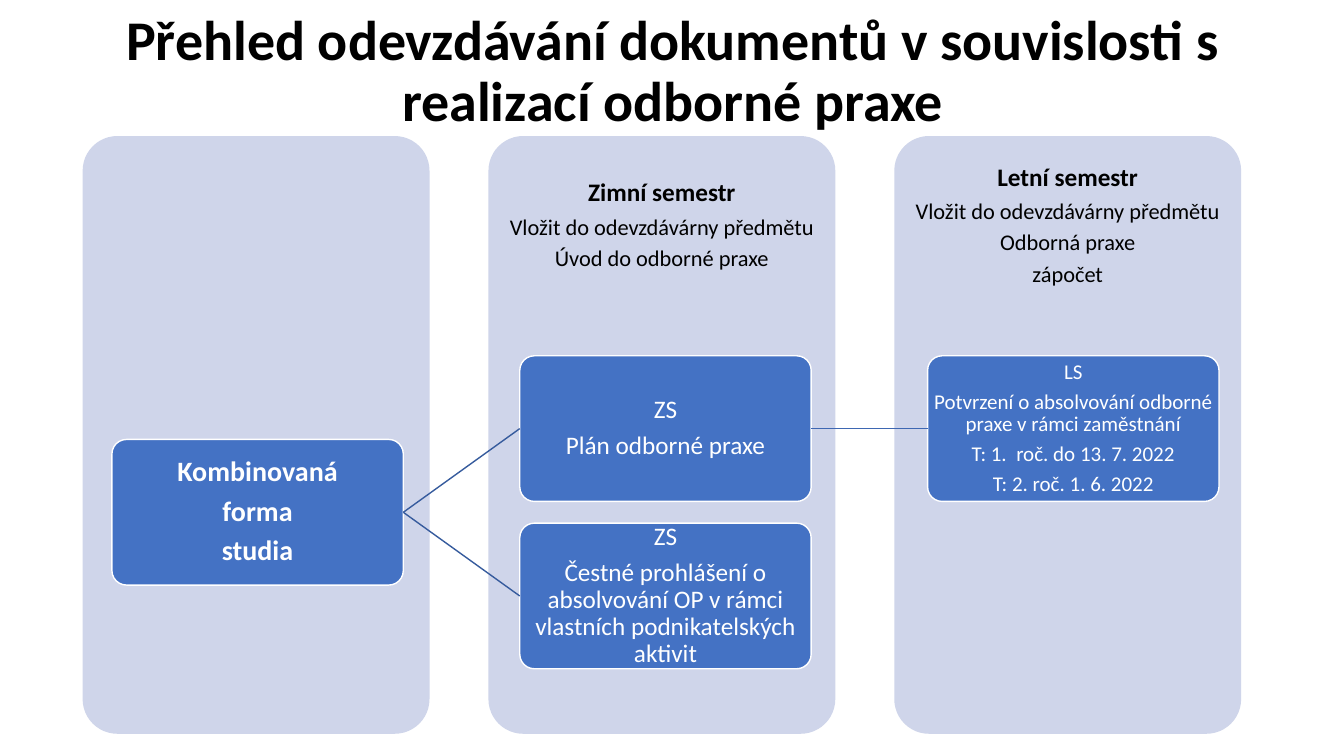
import pptx
import pptx.util
import pptx.dml.color
import pptx.enum.shapes
import pptx.enum.text
import pptx.oxml.ns
import lxml.etree
from dataclasses import dataclass

PX = 914400 // 200  # 200 px to the inch


@dataclass(frozen=True)
class Theme:
    font: str = "Calibri"
    ink: str = "000000"
    white: str = "FFFFFF"
    panel: str = "CFD5EA"
    box: str = "4472C4"
    branch_line: str = "365B9D"
    next_line: str = "3E67B2"
    title_size: int = 40
    form_size: int = 20
    heading_size: int = 18
    detail_size: int = 16
    small_size: int = 15
    line_spacing: float = 0.9
    gap_ratio: float = 0.33
    corner: float = 0.1


THEME = Theme()

# Layout in px
PANEL_LEFT, PANEL_TOP, PANEL_PITCH = 164, 270, 805
PANEL_WIDTH, PANEL_HEIGHT, HEADING_HEIGHT = 688, 1186, 356
BOX_LEFT, BOX_PITCH, BOX_WIDTH, BOX_HEIGHT = 222, 809, 578, 289
ROW_TOP, HALF_ROW = 706, 166
LEFT_SITE, RIGHT_SITE = 1, 3

# Heading lines of each column
HEADINGS = [
    [],
    ["Zimní semestr", "Vložit do odevzdávárny předmětu", "Úvod do odborné praxe"],
    ["Letní semestr", "Vložit do odevzdávárny předmětu", "Odborná praxe", "zápočet"],
]


def px(*lengths):
    return [pptx.util.Emu(length * PX) for length in lengths]


def rgb(value):
    return pptx.dml.color.RGBColor.from_string(value)


def write_lines(shape, lines, color, inset, spaced=True):
    """Fill a shape with centred (text, size, bold) paragraphs."""
    frame = shape.text_frame
    frame.word_wrap = True
    frame.vertical_anchor = pptx.enum.text.MSO_ANCHOR.MIDDLE
    (frame.margin_left, frame.margin_right,
     frame.margin_top, frame.margin_bottom) = px(*[inset] * 4)
    for index, (text, size, bold) in enumerate(lines):
        paragraph = frame.paragraphs[0] if index == 0 else frame.add_paragraph()
        paragraph.text = text
        paragraph.alignment = pptx.enum.text.PP_ALIGN.CENTER
        paragraph.line_spacing = THEME.line_spacing
        if spaced:
            paragraph.space_after = pptx.util.Pt(size * THEME.gap_ratio)
        paragraph.font.name = THEME.font
        paragraph.font.size = pptx.util.Pt(size)
        paragraph.font.bold = bold
        paragraph.font.color.rgb = rgb(color)


def add_rounded(slide, left, top, width, height, fill, outline=None):
    rounded = slide.shapes.add_shape(
        pptx.enum.shapes.MSO_SHAPE.ROUNDED_RECTANGLE, *px(left, top, width, height))
    rounded.adjustments[0] = THEME.corner
    rounded.shadow.inherit = False
    rounded.fill.solid()
    rounded.fill.fore_color.rgb = rgb(fill)
    if outline:
        rounded.line.color.rgb = rgb(outline)
        rounded.line.width = pptx.util.Pt(1)
    else:
        rounded.line.fill.background()
    return rounded


def add_column(slide, column, heading):
    left = PANEL_LEFT + column * PANEL_PITCH
    add_rounded(slide, left, PANEL_TOP, PANEL_WIDTH, PANEL_HEIGHT, THEME.panel)
    if heading:
        semester = slide.shapes.add_textbox(
            *px(left, PANEL_TOP, PANEL_WIDTH, HEADING_HEIGHT))
        lines = [(heading[0], THEME.heading_size, True)]
        lines += [(text, THEME.detail_size, False) for text in heading[1:]]
        write_lines(semester, lines, THEME.ink, inset=28)


def add_box(slide, column, half_row, texts, size, bold=False):
    box = add_rounded(slide, BOX_LEFT + column * BOX_PITCH, ROW_TOP + half_row * HALF_ROW,
                      BOX_WIDTH, BOX_HEIGHT, THEME.box, THEME.white)
    write_lines(box, [(text, size, bold) for text in texts], THEME.white, inset=2)
    return box


def add_link(slide, source, target, color):
    link = slide.shapes.add_connector(
        pptx.enum.shapes.MSO_CONNECTOR.STRAIGHT, *px(0, 0, 0, 0))
    link.begin_connect(source, RIGHT_SITE)
    link.end_connect(target, LEFT_SITE)
    link.line.color.rgb = rgb(color)
    link.line.width = pptx.util.Pt(1)
    properties = link._element.spPr
    lxml.etree.SubElement(properties, pptx.oxml.ns.qn("a:effectLst"))


def main():
    deck = pptx.Presentation()
    deck.slide_width, deck.slide_height = pptx.util.Inches(13.33), pptx.util.Inches(7.5)
    slide = deck.slides.add_slide(deck.slide_layouts[6])

    # Title
    title = slide.shapes.add_textbox(*px(184, 0, 2300, 290))
    title_text = "Přehled odevzdávání dokumentů v souvislosti s realizací odborné praxe"
    write_lines(title, [(title_text, THEME.title_size, True)], THEME.ink,
                inset=10, spaced=False)

    # Columns
    for column, heading in enumerate(HEADINGS):
        add_column(slide, column, heading)

    # Documents
    study_form = add_box(slide, 0, 1, ["Kombinovaná", "forma", "studia"],
                         THEME.form_size, bold=True)
    plan = add_box(slide, 1, 0, ["ZS", "Plán odborné praxe"], THEME.heading_size)
    declaration = add_box(slide, 1, 2, [
        "ZS",
        "Čestné prohlášení o absolvování OP v rámci vlastních podnikatelských aktivit",
    ], THEME.heading_size)
    confirmation = add_box(slide, 2, 0, [
        "LS",
        "Potvrzení o absolvování odborné praxe v rámci zaměstnání",
        "T: 1.  roč. do 13. 7. 2022",
        "T: 2. roč. 1. 6. 2022",
    ], THEME.small_size)

    # Links between documents
    add_link(slide, study_form, plan, THEME.branch_line)
    add_link(slide, study_form, declaration, THEME.branch_line)
    add_link(slide, plan, confirmation, THEME.next_line)

    deck.save("out.pptx")


if __name__ == "__main__":
    main()
